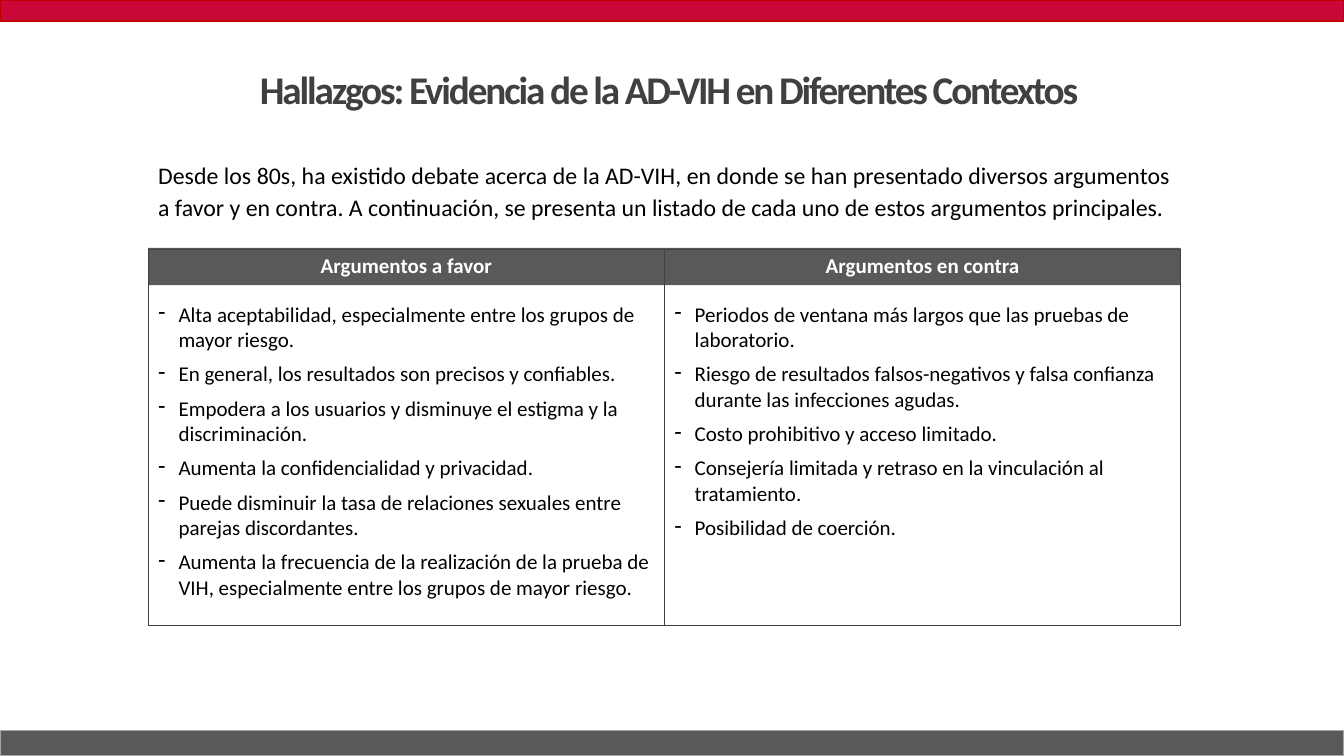
from lxml.etree import SubElement
from pptx import Presentation
from pptx.dml.color import RGBColor
from pptx.enum.shapes import MSO_SHAPE
from pptx.enum.text import MSO_ANCHOR, PP_ALIGN
from pptx.oxml.ns import qn
from pptx.util import Inches, Pt

COLORS = {
    "red": "CA0837",
    "dark_red": "C00000",
    "gray": "595959",
    "light_gray": "A6A6A6",
    "charcoal": "404040",
    "black": "000000",
    "white": "FFFFFF",
}
LEFT, WIDTH = 11.03, 76.82

ARGUMENTS = {
    "Argumentos a favor": [
        "Alta aceptabilidad, especialmente entre los grupos de mayor riesgo.",
        "En general, los resultados son precisos y confiables.",
        "Empodera a los usuarios y disminuye el estigma y la discriminación.",
        "Aumenta la confidencialidad y privacidad.",
        "Puede disminuir la tasa de relaciones sexuales entre parejas discordantes.",
        "Aumenta la frecuencia de la realización de la prueba de VIH, "
        "especialmente entre los grupos de mayor riesgo.",
    ],
    "Argumentos en contra": [
        "Periodos de ventana más largos que las pruebas de laboratorio.",
        "Riesgo de resultados falsos-negativos y falsa confianza durante las infecciones agudas.",
        "Costo prohibitivo y acceso limitado.",
        "Consejería limitada y retraso en la vinculación al tratamiento.",
        "Posibilidad de coerción.",
    ],
}


class SlideBuilder:
    font_name = "Calibri"
    grid = 100

    def __init__(self, presentation):
        self.slide = presentation.slides.add_slide(presentation.slide_layouts[6])
        self.column = presentation.slide_width / self.grid
        self.row = presentation.slide_height / self.grid

    def place(self, left, top, width, height):
        return (
            round(left * self.column),
            round(top * self.row),
            round(width * self.column),
            round(height * self.row),
        )

    def color(self, name):
        return RGBColor.from_string(COLORS[name])

    def fill_paragraph(self, paragraph, text, size, color, bold=False, align=PP_ALIGN.LEFT):
        paragraph.add_run().text = text
        paragraph.alignment = align
        paragraph.font.name = self.font_name
        paragraph.font.size = Pt(size)
        paragraph.font.bold = bold
        paragraph.font.color.rgb = self.color(color)

    def bar(self, position, fill, line=None):
        shape = self.slide.shapes.add_shape(MSO_SHAPE.RECTANGLE, *self.place(*position))
        shape.shadow.inherit = False
        shape.fill.solid()
        shape.fill.fore_color.rgb = self.color(fill)
        if line:
            shape.line.color.rgb = self.color(line)
            shape.line.width = Pt(1)
        else:
            shape.line.fill.background()

    def text(self, position, text, size, color, line_spacing, anchor=MSO_ANCHOR.TOP, **style):
        shape = self.slide.shapes.add_textbox(*self.place(*position))
        shape.text_frame.word_wrap = True
        shape.text_frame.vertical_anchor = anchor
        paragraph = shape.text_frame.paragraphs[0]
        paragraph.line_spacing = line_spacing
        self.fill_paragraph(paragraph, text, size, color, **style)
        return paragraph

    def title(self, position, text):
        paragraph = self.text(
            position, text, 28, "charcoal", 0.9,
            anchor=MSO_ANCHOR.MIDDLE, bold=True, align=PP_ALIGN.CENTER,
        )
        for run in paragraph.runs:
            run._r.get_or_add_rPr().set("spc", "-150")

    def borders(self, cell):
        properties = cell._tc.get_or_add_tcPr()
        for side in ("lnL", "lnR", "lnT", "lnB"):
            line = SubElement(properties, qn(f"a:{side}"), w=str(Pt(0.5)))
            fill = SubElement(line, qn("a:solidFill"))
            SubElement(fill, qn("a:srgbClr"), val=COLORS["charcoal"])

    def dash(self, paragraph):
        properties = paragraph._p.get_or_add_pPr()
        properties.set("marL", str(Inches(0.2)))
        properties.set("indent", str(Inches(-0.2)))
        bullet = properties.makeelement(qn("a:buChar"), {"char": "-"})
        properties.find(qn("a:defRPr")).addprevious(bullet)

    def argument_cell(self, cell, heading, arguments):
        self.borders(cell)
        cell.fill.background()
        paragraph = cell.text_frame.paragraphs[0]
        self.fill_paragraph(paragraph, heading, 15, "white", bold=True, align=PP_ALIGN.CENTER)
        paragraph.space_before, paragraph.space_after = Pt(4), Pt(12)
        for argument in arguments:
            paragraph = cell.text_frame.add_paragraph()
            self.fill_paragraph(paragraph, argument, 15, "black")
            paragraph.space_before, paragraph.space_after = Pt(4), Pt(2)
            self.dash(paragraph)

    def table(self, position, content):
        frame = self.slide.shapes.add_table(1, len(content), *self.place(*position))
        frame.table.first_row = False
        frame.table.horz_banding = False
        for cell, (heading, arguments) in zip(frame.table.iter_cells(), content.items()):
            self.argument_cell(cell, heading, arguments)


def main():
    presentation = Presentation()
    presentation.slide_width = Inches(13.33)
    presentation.slide_height = Inches(7.5)
    builder = SlideBuilder(presentation)
    builder.bar((0, 96.67, 100, 3.33), "gray", "light_gray")
    builder.bar((0, 0, 100, 2.8), "red", "dark_red")
    intro = builder.text(
        (LEFT, 20.13, WIDTH, 9.6),
        "Desde los 80s, ha existido debate acerca de la AD-VIH, en donde se han presentado "
        "diversos argumentos a favor y en contra. A continuación, se presenta un listado de "
        "cada uno de estos argumentos principales.",
        17, "black", 1.12, align=PP_ALIGN.JUSTIFY,
    )
    intro.space_after = Pt(18)
    builder.title(
        (6.9, 2.53, 86.27, 19.33),
        "Hallazgos: Evidencia de la AD-VIH en Diferentes Contextos ",
    )
    builder.bar((LEFT, 32.8, WIDTH, 4.93), "gray")
    builder.table((LEFT, 32.93, WIDTH, 49.73), ARGUMENTS)
    presentation.save("out.pptx")


if __name__ == "__main__":
    main()
